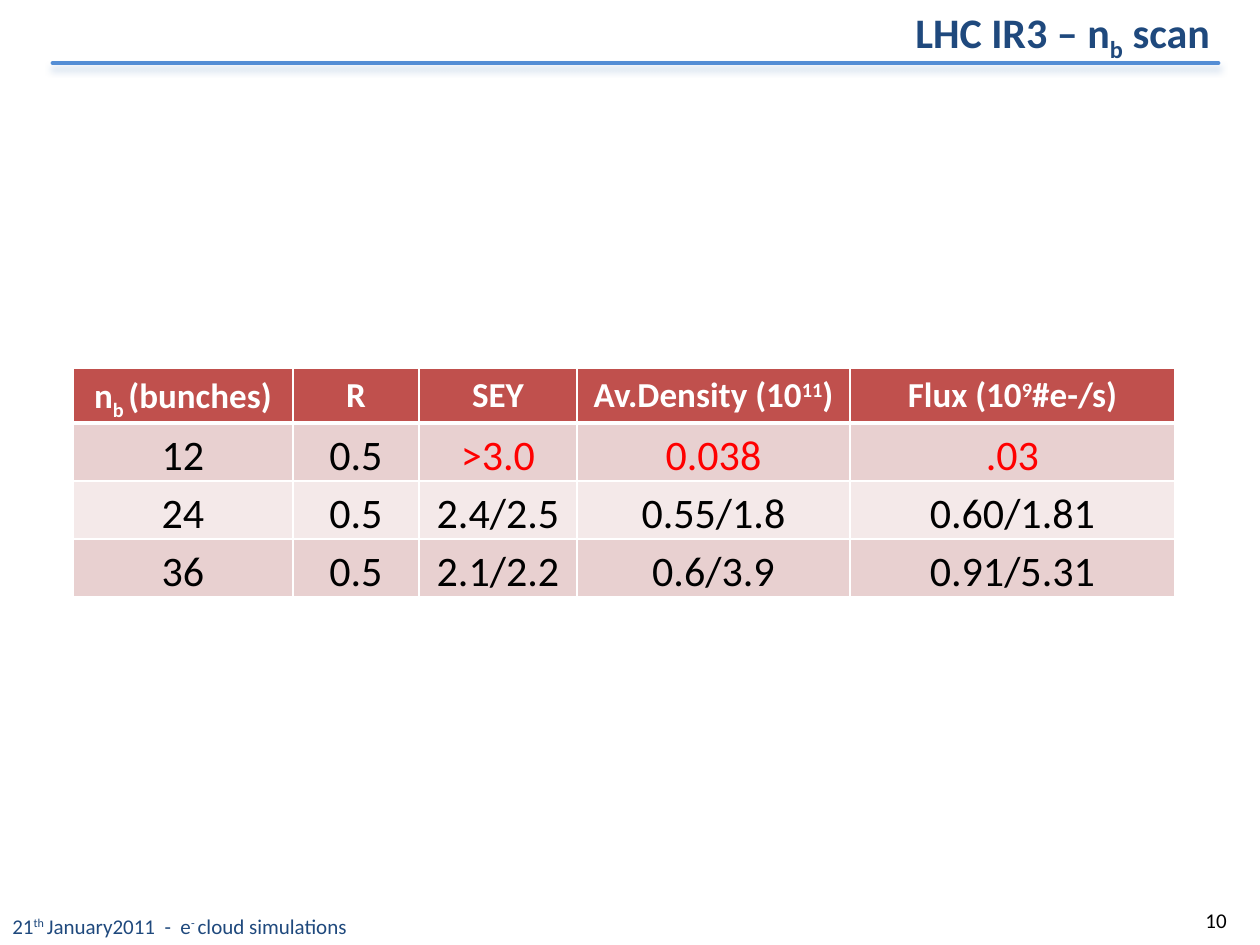
import pptx
import pptx.util
import pptx.dml.color
import pptx.enum.shapes
import pptx.enum.text
import pptx.oxml
import pptx.oxml.ns

COLORS = {
    "navy": "1F497D", "rule": "558ED5", "rule_shadow": "95B3D7",
    "header": "C0504D", "band_dark": "E8D0D0", "band_light": "F4E9E9",
    "white": "FFFFFF", "black": "000000", "alert": "FF0000",
}
FONT = "Calibri"
SUB, SUPER = -25, 30  # baseline shift in percent
ALIGN = pptx.enum.text.PP_ALIGN

COLUMN_WIDTHS = [220, 126, 158, 273, 325]
ROW_HEIGHT = 52
# A text is a list of runs: a string, or a (string, baseline) pair
HEADINGS = [
    ["n", ("b ", SUB), "(bunches)"],
    ["R"],
    ["SEY"],
    ["Av.Density (10", ("11", SUPER), ")"],
    ["Flux (10", ("9", SUPER), "#e-/s)"],
]
SCAN_ROWS = [
    ["12", "0.5", ">3.0", "0.038", ".03"],
    ["24", "0.5", "2.4/2.5", "0.55/1.8", "0.60/1.81"],
    ["36", "0.5", "2.1/2.2", "0.6/3.9", "0.91/5.31"],
]
ALERT_CELLS = {">3.0", "0.038", ".03"}


def px(length):
    return pptx.util.Emu(round(length * 914400 / 126))


def rgb(name):
    return pptx.dml.color.RGBColor.from_string(COLORS[name])


def write(frame, runs, size=12, color="black", bold=False, align=ALIGN.LEFT, spacing=None):
    paragraph = frame.paragraphs[0]
    paragraph.alignment = align
    paragraph.line_spacing = spacing
    for part in runs:
        text, baseline = (part, 0) if isinstance(part, str) else part
        run = paragraph.add_run()
        run.text = text
        run.font.name = FONT
        run.font.size = pptx.util.Pt(size)
        run.font.bold = bold
        run.font.color.rgb = rgb(color)
        if baseline:
            run.font._rPr.set("baseline", str(baseline * 1000))


def add_text(slide, left, top, width, height, runs,
             anchor=pptx.enum.text.MSO_ANCHOR.TOP, **text_format):
    box = slide.shapes.add_textbox(px(left), px(top), px(width), px(height))
    box.text_frame.word_wrap = True
    box.text_frame.vertical_anchor = anchor
    write(box.text_frame, runs, **text_format)


def add_title_rule(slide, left, right, y):
    rule = slide.shapes.add_connector(
        pptx.enum.shapes.MSO_CONNECTOR.STRAIGHT, px(left), px(y), px(right), px(y))
    rule.line.color.rgb = rgb("rule")
    rule.line.width = pptx.util.Pt(2.75)
    properties = rule._element.spPr
    properties.find(pptx.oxml.ns.qn("a:ln")).set("cap", "rnd")
    # Soft shadow just below the rule
    properties.append(pptx.oxml.parse_xml(
        f'<a:effectLst {pptx.oxml.ns.nsdecls("a")}>'
        f'<a:outerShdw blurRad="{pptx.util.Pt(4)}" dist="{pptx.util.Pt(3)}"'
        ' dir="5400000" rotWithShape="0">'
        f'<a:srgbClr val="{COLORS["rule_shadow"]}"><a:alpha val="40000"/></a:srgbClr>'
        '</a:outerShdw></a:effectLst>'))


def set_borders(cell, **widths):
    properties = cell._tc.get_or_add_tcPr()
    for side in "LRTB":
        width = pptx.util.Pt(widths.get(side, 1))
        properties.append(pptx.oxml.parse_xml(
            f'<a:ln{side} {pptx.oxml.ns.nsdecls("a")} w="{width}">'
            f'<a:solidFill><a:srgbClr val="{COLORS["white"]}"/></a:solidFill>'
            f'</a:ln{side}>'))


def fill_cell(cell, runs, fill, borders, **text_format):
    cell.margin_left = cell.margin_right = px(9)
    cell.margin_top = cell.margin_bottom = 0
    set_borders(cell, **borders)
    cell.fill.solid()
    cell.fill.fore_color.rgb = rgb(fill)
    write(cell.text_frame, runs, align=ALIGN.CENTER, spacing=1.15, **text_format)


def add_scan_table(slide, left, top):
    row_count = len(SCAN_ROWS) + 1
    table = slide.shapes.add_table(
        row_count, len(COLUMN_WIDTHS), px(left), px(top),
        px(sum(COLUMN_WIDTHS)), px(ROW_HEIGHT * row_count)).table
    for column, width in zip(table.columns, COLUMN_WIDTHS):
        column.width = px(width)

    # Heading row, with a thick line under it
    for column, heading in enumerate(HEADINGS):
        fill_cell(table.cell(0, column), heading, "header", {"B": 3},
                  size=20, color="white", bold=True)

    # Banded value rows
    for row, values in enumerate(SCAN_ROWS, start=1):
        band = "band_dark" if row % 2 else "band_light"
        borders = {"T": 3} if row == 1 else {}
        for column, value in enumerate(values):
            fill_cell(table.cell(row, column), [value], band, borders, size=24,
                      color="alert" if value in ALERT_CELLS else "black")


def main():
    deck = pptx.Presentation()
    deck.slide_width, deck.slide_height = px(1260), px(945)
    slide = deck.slides.add_slide(deck.slide_layouts[6])

    # Page number
    add_text(slide, 945, 895, 294, 50, ["10"], align=ALIGN.RIGHT,
             anchor=pptx.enum.text.MSO_ANCHOR.MIDDLE)

    # Title and its rule
    add_title_rule(slide, 53, 1218, 63)
    add_text(slide, 903, 0, 336, 63, ["LHC IR3 – n", ("b", SUB), " scan"],
             size=24, color="navy", bold=True)

    # Footer
    add_text(slide, 0, 907, 1187, 38,
             ["21", ("th ", SUPER), "January2011  -  e", ("- ", SUPER), "cloud simulations"],
             color="navy")

    # Scan results
    add_scan_table(slide, 73, 368)

    deck.save("out.pptx")


if __name__ == "__main__":
    main()
